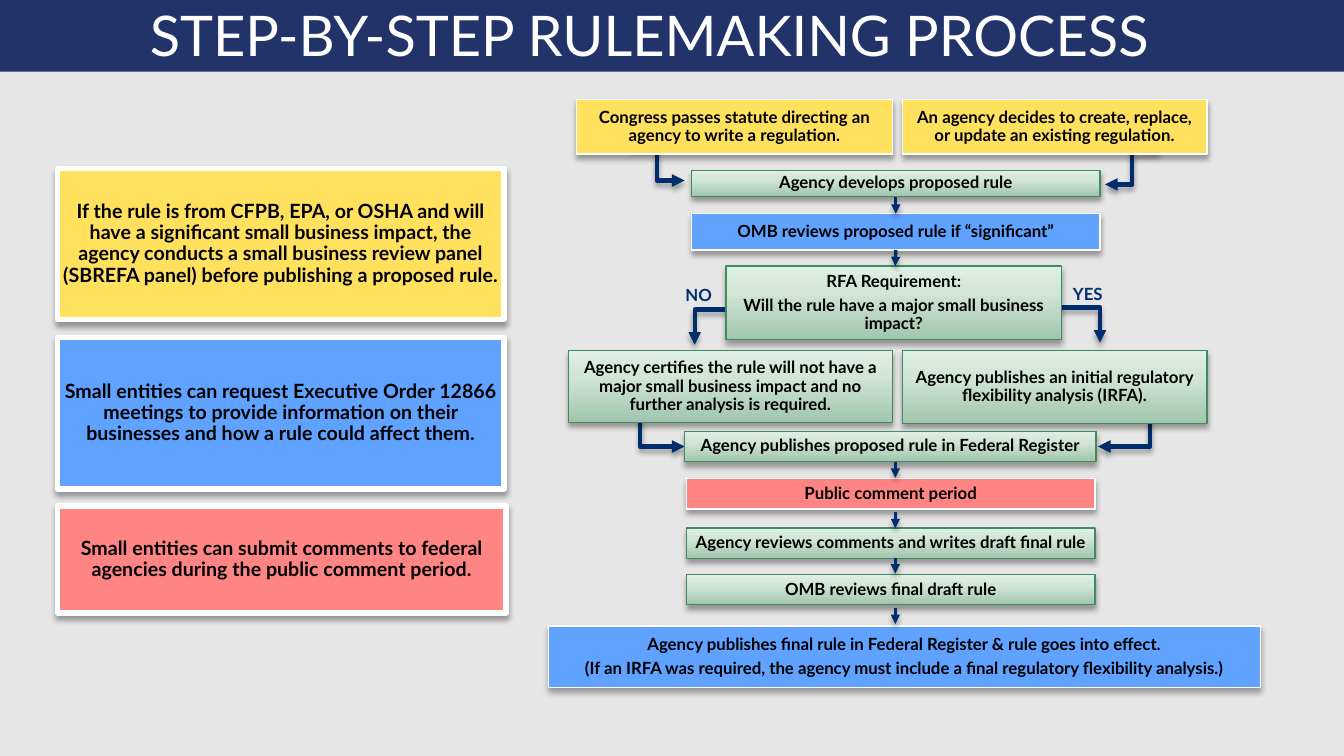
from dataclasses import dataclass

from pptx import Presentation
from pptx.dml.color import RGBColor
from pptx.enum.shapes import MSO_CONNECTOR as Connector, MSO_SHAPE as Shape
from pptx.enum.text import MSO_ANCHOR as Anchor, MSO_AUTO_SIZE as AutoSize, PP_ALIGN as Align
from pptx.oxml import parse_xml
from pptx.oxml.ns import nsdecls, qn
from pptx.util import Pt

EMU_PER_PX = 9144
FONT = "Lato"
COLORS = {
    "background": "E7E6E6", "banner": "223369", "arrow": "002E6D",
    "yellow": "FFE15E", "blue": "5FA2FF", "red": "FF8585",
    "green_line": "408C5F", "white": "FFFFFF", "black": "000000",
}
GREEN_STOPS = {0: "A0C5AC", 65: "D2E6D8", 100: "DEEFE4"}
TOP, BOTTOM = 0, 2
FLOW_X = 888


@dataclass(frozen=True)
class Box:
    key: str
    left: int
    top: int
    width: int
    height: int
    color: str
    lines: tuple[str, ...]
    size: int = 12
    border: int = 1
    inset: int = 6


@dataclass(frozen=True)
class Elbow:
    start: tuple[int, int]
    end: tuple[int, int]
    vertical: bool = False


@dataclass(frozen=True)
class Arrow:
    top: int
    bottom: int
    source: str = ""
    target: str = ""


@dataclass(frozen=True)
class Label:
    text: str
    left: int
    top: int
    width: int
    height: int = 25


BOXES = [
    Box("statute", 572, 99, 313, 54, "yellow",
        ("Congress passes statute directing an agency to write a regulation.",)),
    Box("agency decision", 895, 99, 302, 54, "yellow",
        ("An agency decides to create, replace, or update an existing regulation.",)),
    Box("proposed rule", 686, 169, 405, 26, "green", ("Agency develops proposed rule",)),
    Box("proposed review", 686, 212, 405, 36, "blue",
        ("OMB reviews proposed rule if “significant”",)),
    Box("RFA question", 720, 264, 333, 73, "green",
        ("RFA Requirement:", "Will the rule have a major small business impact?")),
    Box("certification", 564, 348, 321, 71, "green",
        ("Agency certifies the rule will not have a major small business impact "
         "and no further analysis is required.",)),
    Box("initial analysis", 895, 348, 302, 72, "green",
        ("Agency publishes an initial regulatory flexibility analysis (IRFA).",)),
    Box("publication", 679, 428, 408, 30, "green",
        ("Agency publishes proposed rule in Federal Register",)),
    Box("comment period", 681, 475, 405, 30, "red", ("Public comment period",)),
    Box("draft final rule", 681, 524, 405, 30, "green",
        ("Agency reviews comments and writes draft final rule",)),
    Box("final review", 681, 570, 405, 30, "green", ("OMB reviews final draft rule",)),
    Box("final rule", 544, 621, 706, 61, "blue",
        ("Agency publishes final rule in Federal Register & rule goes into effect.",
         "(If an IRFA was required, the agency must include a final regulatory "
         "flexibility analysis.)")),
    Box("panel note", 57, 167, 443, 150, "yellow",
        ("If the rule is from CFPB, EPA, or OSHA and will have a significant small "
         "business impact, the agency conducts a small business review panel "
         "(SBREFA panel) before publishing a proposed rule.",),
        size=14, border=4, inset=5),
    Box("meeting note", 57, 335, 443, 150, "blue",
        ("Small entities can request Executive Order 12866 meetings to provide "
         "information on their businesses and how a rule could affect them.",),
        size=14, border=4),
    Box("comment note", 57, 502, 445, 106, "red",
        ("Small entities can submit comments to federal agencies during the "
         "public comment period.",), size=14, border=4),
]
ELBOWS = [
    Elbow((624, 147), (679, 179)),
    Elbow((1150, 151), (1096, 183)),
    Elbow((734, 272), (689, 342), vertical=True),
    Elbow((1046, 270), (1091, 340), vertical=True),
    Elbow((591, 377), (679, 443)),
    Elbow((1193, 397), (1089, 443)),
]
ARROWS = [
    Arrow(195, 212, "proposed rule", "proposed review"),
    Arrow(248, 264, "proposed review"),
    Arrow(458, 474),
    Arrow(508, 524),
    Arrow(554, 569),
    Arrow(603, 619),
]
LABELS = [Label("NO", 662, 278, 62), Label("YES", 1046, 277, 66)]


def px(*values: float) -> list[int]:
    return [round(value * EMU_PER_PX) for value in values]


def rgb(name: str) -> RGBColor:
    return RGBColor.from_string(COLORS[name])


def write(shape, lines, *, size=12, color="black", bold=True, spacing=None,
          space_after=0.0, inset=None, anchor=Anchor.MIDDLE) -> None:
    frame = shape.text_frame
    frame.word_wrap = True
    frame.auto_size = AutoSize.NONE
    frame.vertical_anchor = anchor
    if inset is not None:
        margin = px(inset)[0]
        frame.margin_left = frame.margin_right = margin
        frame.margin_top = frame.margin_bottom = margin
    for index, line in enumerate(lines):
        paragraph = frame.add_paragraph() if index else frame.paragraphs[0]
        paragraph.alignment = Align.CENTER
        paragraph.line_spacing = spacing
        paragraph.space_after = Pt(space_after)
        run = paragraph.add_run()
        run.text = line
        run.font.name = FONT
        run.font.size = Pt(size)
        run.font.bold = bold
        run.font.color.rgb = rgb(color)


def add_shadow(shape) -> None:
    shape._element.spPr.append(parse_xml(
        f'<a:effectLst {nsdecls("a")}><a:outerShdw blurRad="50800" dist="38100" '
        'dir="5400000" algn="t" rotWithShape="0"><a:srgbClr val="000000">'
        '<a:alpha val="35000"/></a:srgbClr></a:outerShdw></a:effectLst>'))


def fill_green(shape) -> None:
    stops = "".join(f'<a:gs pos="{position * 1000}"><a:srgbClr val="{color}"/></a:gs>'
                    for position, color in GREEN_STOPS.items())
    shape._element.spPr.find(qn("a:prstGeom")).addnext(parse_xml(
        f'<a:gradFill {nsdecls("a")} rotWithShape="1"><a:gsLst>{stops}</a:gsLst>'
        '<a:lin ang="16200000" scaled="0"/></a:gradFill>'))


def add_box(slide, box: Box):
    shape = slide.shapes.add_shape(
        Shape.RECTANGLE, *px(box.left, box.top, box.width, box.height))
    if box.color == "green":
        fill_green(shape)
    else:
        shape.fill.solid()
        shape.fill.fore_color.rgb = rgb(box.color)
    shape.line.color.rgb = rgb("green_line" if box.color == "green" else "white")
    shape.line.width = Pt(box.border)
    add_shadow(shape)
    write(shape, box.lines, size=box.size, spacing=0.9,
          space_after=0.35 * box.size, inset=box.inset)
    return shape


def format_arrow(connector, width: float) -> None:
    connector.line.color.rgb = rgb("arrow")
    connector.line.width = Pt(width)
    connector.line._get_or_add_ln().append(
        parse_xml(f'<a:tailEnd {nsdecls("a")} type="triangle"/>'))
    add_shadow(connector)


def add_elbow(slide, elbow: Elbow) -> None:
    (x1, y1), (x2, y2) = elbow.start, elbow.end
    rotation = 0
    if elbow.vertical:
        middle_x, middle_y = (x1 + x2) / 2, (y1 + y2) / 2
        side = 1 if x2 < x1 else -1
        rotation = 90 if side == 1 else 270
        half_run, half_rise = (y2 - y1) / 2, abs(x2 - x1) / 2
        x1, x2 = middle_x - side * half_run, middle_x + side * half_run
        y1, y2 = middle_y - half_rise, middle_y + half_rise
    connector = slide.shapes.add_connector(Connector.ELBOW, *px(x1, y1, x2, y2))
    if rotation:
        connector._element.spPr.find(qn("a:xfrm")).set("rot", str(rotation * 60000))
    format_arrow(connector, 3)


def add_arrow(slide, arrow: Arrow, boxes: dict) -> None:
    connector = slide.shapes.add_connector(
        Connector.STRAIGHT, *px(FLOW_X, arrow.top, FLOW_X, arrow.bottom))
    if arrow.source:
        connector.begin_connect(boxes[arrow.source], BOTTOM)
    if arrow.target:
        connector.end_connect(boxes[arrow.target], TOP)
    format_arrow(connector, 2.25)


def add_title(slide) -> None:
    banner = slide.shapes.add_shape(Shape.RECTANGLE, *px(0, 0, 1333, 71))
    banner.shadow.inherit = False
    banner.fill.solid()
    banner.fill.fore_color.rgb = rgb("banner")
    banner.line.fill.background()
    title = slide.shapes.title
    title._element.addprevious(banner._element)
    title.left, title.top, title.width, title.height = px(91, 3, 1106, 71)
    write(title, ["STEP-BY-STEP RULEMAKING PROCESS"], size=40, color="white",
          bold=False, spacing=0.9)


def main() -> None:
    presentation = Presentation()
    presentation.slide_width, presentation.slide_height = px(1333, 750)
    slide = presentation.slides.add_slide(presentation.slide_layouts[5])
    slide.background.fill.solid()
    slide.background.fill.fore_color.rgb = rgb("background")
    add_title(slide)
    for elbow in ELBOWS:
        add_elbow(slide, elbow)
    boxes = {box.key: add_box(slide, box) for box in BOXES}
    for arrow in ARROWS:
        add_arrow(slide, arrow, boxes)
    for label in LABELS:
        text_box = slide.shapes.add_textbox(
            *px(label.left, label.top, label.width, label.height))
        write(text_box, [label.text], color="arrow", anchor=Anchor.TOP)
    presentation.save("out.pptx")


if __name__ == "__main__":
    main()
